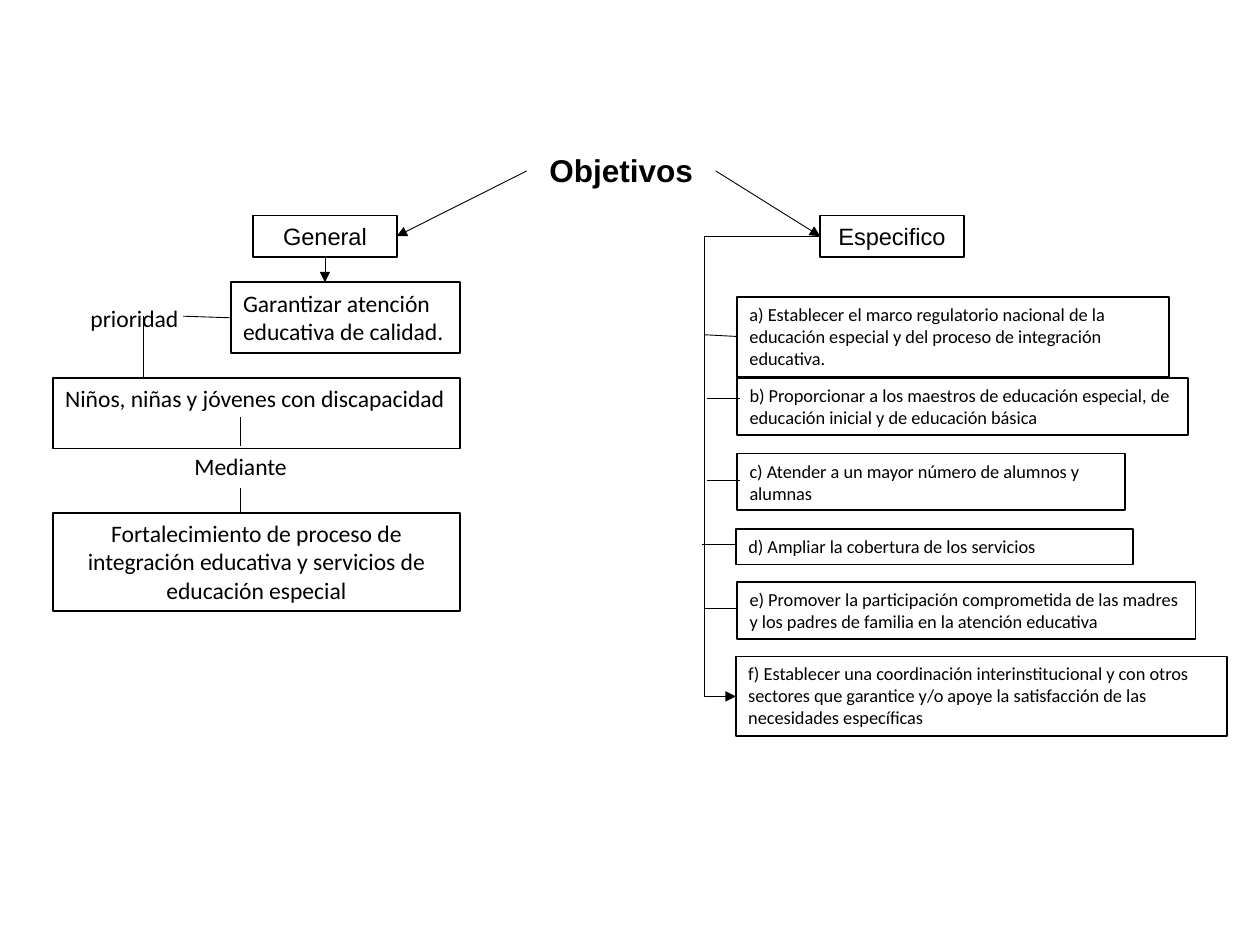
from pptx import Presentation
from pptx.dml.color import RGBColor
from pptx.enum import shapes, text
from pptx.oxml import parse_xml
from pptx.oxml.ns import nsdecls
from pptx.util import Pt

BLACK = RGBColor(0, 0, 0)
WHITE = RGBColor(255, 255, 255)
LEFT, CENTER = text.PP_ALIGN.LEFT, text.PP_ALIGN.CENTER
STRAIGHT, ELBOW = shapes.MSO_CONNECTOR.STRAIGHT, shapes.MSO_CONNECTOR.ELBOW

TITLE = ("Objetivos", (301, 82.8, 108, 28.8))
HEADINGS = [
    ("General", (144.7, 123.1, 82, 23.8)),
    ("Especifico", (468.7, 123.1, 82, 23.8)),
]
GENERAL_BOXES = [
    ("Garantizar atención educativa de calidad.", (131.8, 161.3, 131, 40.3), LEFT),
    ("Niños, niñas y jóvenes con discapacidad", (30.2, 216, 232.6, 40.3), LEFT),
    ("Fortalecimiento de proceso de integración educativa y servicios de educación especial",
     (30.2, 293, 232.6, 56.2), CENTER),
]
LABELS = [
    ("prioridad", (44.6, 169.9, 73.4, 23.8), LEFT),
    ("Mediante", (90.7, 254.9, 93.6, 23.8), CENTER),
]
SPECIFIC_BOXES = [
    ("a) Establecer el marco regulatorio nacional de la educación especial y del proceso "
     "de integración educativa.", (421.2, 169.9, 247, 45.4)),
    ("b) Proporcionar a los maestros de educación especial, de educación inicial y de "
     "educación básica", (421.2, 216, 257.8, 32.4)),
    ("c) Atender a un mayor número de alumnos y alumnas", (421.2, 259.2, 221.8, 32.4)),
    ("d) Ampliar la cobertura de los servicios", (420.5, 302.4, 226.8, 20.2)),
    ("e) Promover la participación comprometida de las madres y los padres de familia en "
     "la atención educativa", (421.2, 332.6, 262, 32.4)),
    ("f) Establecer una coordinación interinstitucional y con otros sectores que garantice "
     "y/o apoye la satisfacción de las necesidades específicas", (420.5, 375.1, 280.8, 45.4)),
]
ARROWS = [
    (185.7, 146.9, 185.7, 161.3),
    (301, 97.7, 226.7, 135),
    (409, 97.7, 468.7, 135),
]
LINKS = [
    (131.8, 181.6, 104.6, 180.7),
    (82, 180.7, 82, 216),
    (137.4, 238.3, 137.4, 254.9),
    (137.4, 278.7, 137.4, 293),
]
BRANCHES = [
    (421.2, 192.3, 402.5, 191.3),
    (422.6, 227.7, 403.9, 227.7),
    (422.6, 274.3, 403.9, 274.3),
    (420.5, 311.2, 401.2, 311.2),
    (421.2, 347.6, 402.5, 347.6),
]
TRUNK = (468.7, 135, 420.5, 397.9)
TRUNK_BEND = 136900


def write(shape, content, size, font, align, bold=False):
    frame = shape.text_frame
    frame_format = {
        "text": content, "word_wrap": True,
        "vertical_anchor": text.MSO_ANCHOR.TOP, "auto_size": text.MSO_AUTO_SIZE.NONE,
        "margin_left": Pt(7.2), "margin_right": Pt(7.2),
        "margin_top": Pt(3.6), "margin_bottom": Pt(3.6),
    }
    for name, value in frame_format.items():
        setattr(frame, name, value)
    paragraph = frame.paragraphs[0]
    for name, value in {"alignment": align, "line_spacing": 1.0, "space_before": Pt(0)}.items():
        setattr(paragraph, name, value)
    run_font = paragraph.runs[0].font
    for name, value in {"size": Pt(size), "name": font, "bold": bold}.items():
        setattr(run_font, name, value)
    run_font.color.rgb = BLACK


def add_box(slide, content, place, size, font, align):
    shape = slide.shapes.add_shape(shapes.MSO_SHAPE.RECTANGLE, *map(Pt, place))
    shape.shadow.inherit = False
    shape.fill.solid()
    shape.fill.fore_color.rgb = WHITE
    shape.line.color.rgb = BLACK
    shape.line.width = Pt(1)
    write(shape, content, size, font, align)


def add_line(slide, ends, arrow=False, kind=STRAIGHT):
    connector = slide.shapes.add_connector(kind, *map(Pt, ends))
    connector.line.color.rgb = BLACK
    connector.line.width = Pt(0.5)
    if arrow:
        connector.line._get_or_add_ln().append(
            parse_xml(f'<a:tailEnd {nsdecls("a")} type="triangle"/>'))
    properties = connector._element.spPr
    properties.append(parse_xml(f'<a:effectLst {nsdecls("a")}/>'))
    return properties


def main():
    presentation = Presentation()
    presentation.slide_width, presentation.slide_height = Pt(720), Pt(540)
    slide = presentation.slides.add_slide(presentation.slide_layouts[5])

    content, place = TITLE
    title = slide.shapes.title
    for name, value in zip(("left", "top", "width", "height"), place):
        setattr(title, name, Pt(value))
    write(title, content, 18, "Arial", CENTER, bold=True)

    for content, place in HEADINGS:
        add_box(slide, content, place, 13.5, "Arial", CENTER)
    for content, place, align in GENERAL_BOXES:
        add_box(slide, content, place, 13.5, "Calibri", align)
    for content, place, align in LABELS:
        label = slide.shapes.add_textbox(*map(Pt, place))
        write(label, content, 13.5, "Calibri", align)
    for content, place in SPECIFIC_BOXES:
        add_box(slide, content, place, 10.5, "Calibri", LEFT)

    for ends in ARROWS:
        add_line(slide, ends, arrow=True)
    for ends in LINKS + BRANCHES:
        add_line(slide, ends)
    trunk = add_line(slide, TRUNK, arrow=True, kind=ELBOW)
    trunk.prstGeom.get_or_add_avLst().append(
        parse_xml(f'<a:gd {nsdecls("a")} name="adj1" fmla="val {TRUNK_BEND}"/>'))

    presentation.save("out.pptx")


if __name__ == "__main__":
    main()
